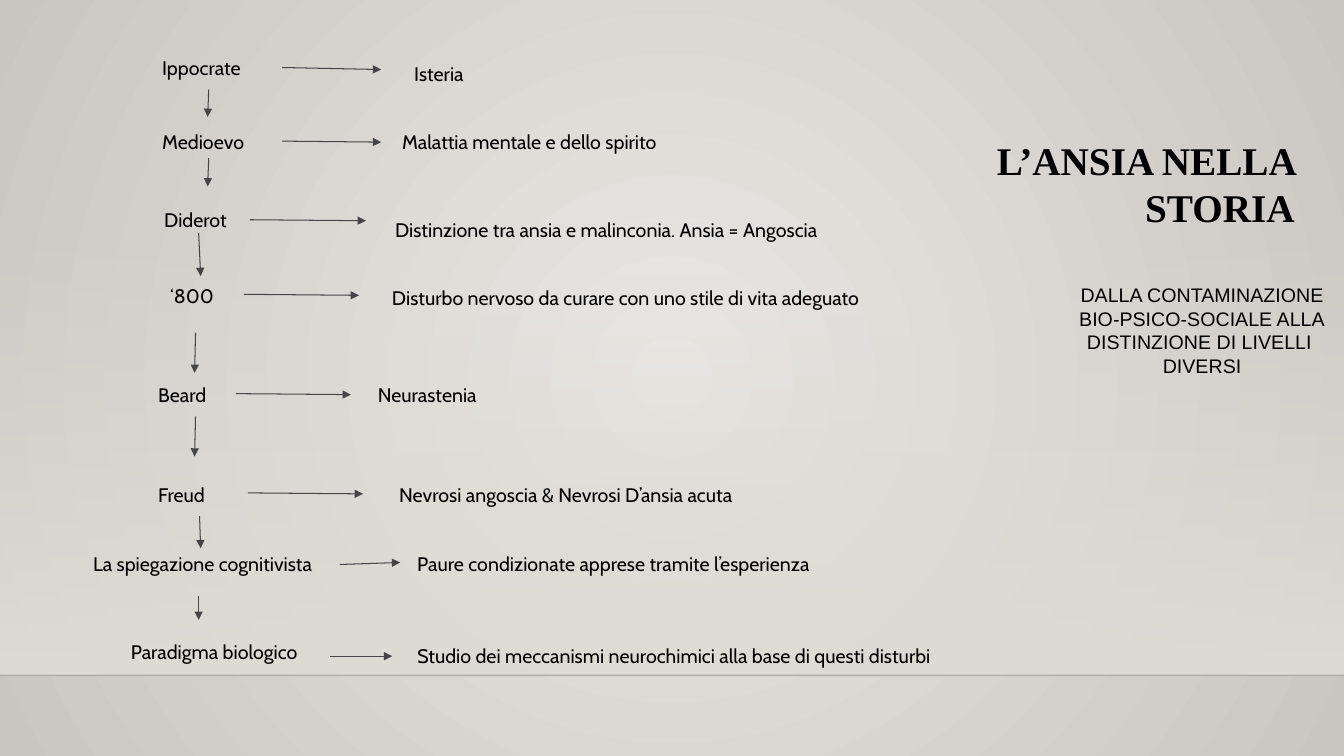
from lxml import etree
from pptx import Presentation
from pptx.dml.color import RGBColor as RGB
from pptx.enum.shapes import MSO_CONNECTOR as CONN, MSO_SHAPE as SHAPE
from pptx.enum.text import MSO_AUTO_SIZE as AUTO, PP_ALIGN as ALIGN
from pptx.oxml import parse_xml
from pptx.oxml.ns import qn
from pptx.util import Inches, Pt

THEME = {
    "ink": RGB.from_string("000000"), "arrow": RGB.from_string("454545"),
    "edge": RGB.from_string("000001"),
    "glow": "EBE9E6", "rim": "C9C5C0", "floor": "DFDBD5",
    "body": ("Cabin", 14), "title": ("Times New Roman", 28), "sub": ("Arial", 14),
}
NS = 'xmlns:a="http://schemas.openxmlformats.org/drawingml/2006/main"'
LEFT, MID, RIGHT = ALIGN.LEFT, ALIGN.CENTER, ALIGN.RIGHT

deck = Presentation()
deck.slide_width, deck.slide_height = Inches(13.33), Inches(7.5)
slide = deck.slides.add_slide(deck.slide_layouts[6])

# Lengths are percentages of the slide: COL across, ROW down
COL, ROW = deck.slide_width / 100, deck.slide_height / 100


def write(lines, x, y, w, h, style, align=LEFT, bold=False, wrap=True, inset=0.1):
    box = slide.shapes.add_textbox(int(x * COL), int(y * ROW), int(w * COL), int(h * ROW))
    frame = box.text_frame
    frame.word_wrap, frame.auto_size = wrap, AUTO.SHAPE_TO_FIT_TEXT
    frame.margin_left = frame.margin_right = Inches(0.1)
    frame.margin_top = frame.margin_bottom = Inches(inset)
    frame.text = "\n".join(lines)
    face, size = THEME[style]
    for par in frame.paragraphs:
        par.alignment = align
        par.font.name, par.font.size, par.font.bold = face, Pt(size), bold
        par.font.color.rgb = THEME["ink"]


def rule(x1, y1, x2, y2, color, width):
    line = slide.shapes.add_connector(
        CONN.STRAIGHT, int(x1 * COL), int(y1 * ROW), int(x2 * COL), int(y2 * ROW))
    line.line.color.rgb, line.line.width = THEME[color], Pt(width)
    etree.SubElement(line._element.spPr, qn("a:effectLst"))
    return line.line._get_or_add_ln()


# Background: round glow from the centre
back = slide.background.fill
back.gradient()
grad = back._xPr.find(qn("a:gradFill"))
back._xPr.replace(grad, parse_xml(
    f'<a:gradFill {NS} rotWithShape="1"><a:gsLst>'
    f'<a:gs pos="0"><a:srgbClr val="{THEME["glow"]}"/></a:gs>'
    f'<a:gs pos="100000"><a:srgbClr val="{THEME["rim"]}"/></a:gs></a:gsLst>'
    '<a:path path="circle"><a:fillToRect l="50000" t="50000" r="50000" b="50000"/></a:path>'
    '</a:gradFill>'))

# Wall fading in down to the floor line
HORIZON, TOP = 89.33, 29.47
wall = slide.shapes.add_shape(
    SHAPE.RECTANGLE, 0, int(TOP * ROW), deck.slide_width, int((HORIZON - TOP) * ROW))
wall.shadow.inherit = False
wall.line.fill.background()
wall.fill.gradient()
wall.fill.gradient_angle = 270
for stop, alpha in zip(wall.fill.gradient_stops, (0, 100)):
    stop.color.rgb = RGB.from_string(THEME["floor"])
for tint, alpha in zip(wall._element.spPr.iter(qn("a:srgbClr")), (0, 100000)):
    etree.SubElement(tint, qn("a:alpha"), val=str(alpha))
edge = rule(0, HORIZON, 100, HORIZON, "edge", 1)
etree.SubElement(next(edge.iter(qn("a:srgbClr"))), qn("a:alpha"), val="20000")

# Timeline: era (x, y, width, alignment) and its idea (x, y, width)
STEPS = [
    ("Ippocrate", (11.33, 6, 9.68, LEFT), "Isteria", (30.08, 6.8, 44.56)),
    ("Medioevo", (11.33, 15.87, 8.4, LEFT),
     "Malattia mentale e dello spirito", (29.18, 15.87, 24.83)),
    ("Diderot", (11.48, 26.13, 7.13, LEFT),
     "Distinzione tra ansia e malinconia. Ansia = Angoscia", (28.66, 27.47, 40.81)),
    ("‘800", (11.93, 36.27, 7.13, LEFT),
     "Disturbo nervoso da curare con uno stile di vita adeguato", (28.43, 36.53, 37.13)),
    ("Beard", (11.03, 49.33, 5.85, LEFT), "Neurastenia", (27.38, 49.33, 29.93)),
    ("Freud", (11.03, 62.53, 7.65, LEFT),
     "Nevrosi angoscia & Nevrosi D’ansia acuta", (28.96, 62.53, 35.18)),
    ("La spiegazione cognitivista", (4.88, 71.73, 20.41, MID),
     "Paure condizionate apprese tramite l’esperienza", (30.31, 71.73, 36.01)),
    ("Paradigma biologico", (8.55, 83.33, 14.78, MID),
     "Studio dei meccanismi neurochimici alla base di questi disturbi",
     (30.31, 83.87, 42.09)),
]
TALL = 5.87
for era, (x, y, w, align), idea, spot in STEPS:
    write([era], x, y, w, TALL, "body", align)
    write([idea], *spot, TALL, "body")

# Arrows: from era to idea, then from era to era
ACROSS = [
    (21, 8.93, 28.36, 9.2), (21, 18.67, 28.36, 18.8),
    (18.6, 29.07, 27.23, 29.2), (18.15, 38.93, 26.71, 39.07),
    (17.55, 52.07, 26.11, 52.2), (18.45, 65.2, 27.01, 65.33),
    (25.28, 74.67, 29.78, 74.4), (24.53, 86.8, 29.18, 86.8),
]
DOWN = [
    (15.53, 11.87, 15.45, 15.47), (15.53, 20.93, 15.45, 24.67),
    (14.78, 30.8, 14.93, 36.53), (14.55, 44, 14.48, 49.33),
    (14.55, 55.07, 14.48, 60.4), (14.85, 68.27, 14.93, 72.53),
    (14.78, 78.8, 14.78, 82),
]
for ends in ACROSS + DOWN:
    etree.SubElement(rule(*ends, "arrow", 0.75), qn("a:tailEnd"), type="triangle")

# Title and subtitle
write(["L’ANSIA NELLA STORIA"], 70.73, 16.67, 26.33, 15.2, "title", RIGHT, bold=True)
write(["DALLA CONTAMINAZIONE", "BIO-PSICO-SOCIALE ALLA", "DISTINZIONE DI LIVELLI ", "DIVERSI"],
      79.43, 36.8, 20.03, 13.87, "sub", MID, wrap=False, inset=0.05)

deck.save("out.pptx")
